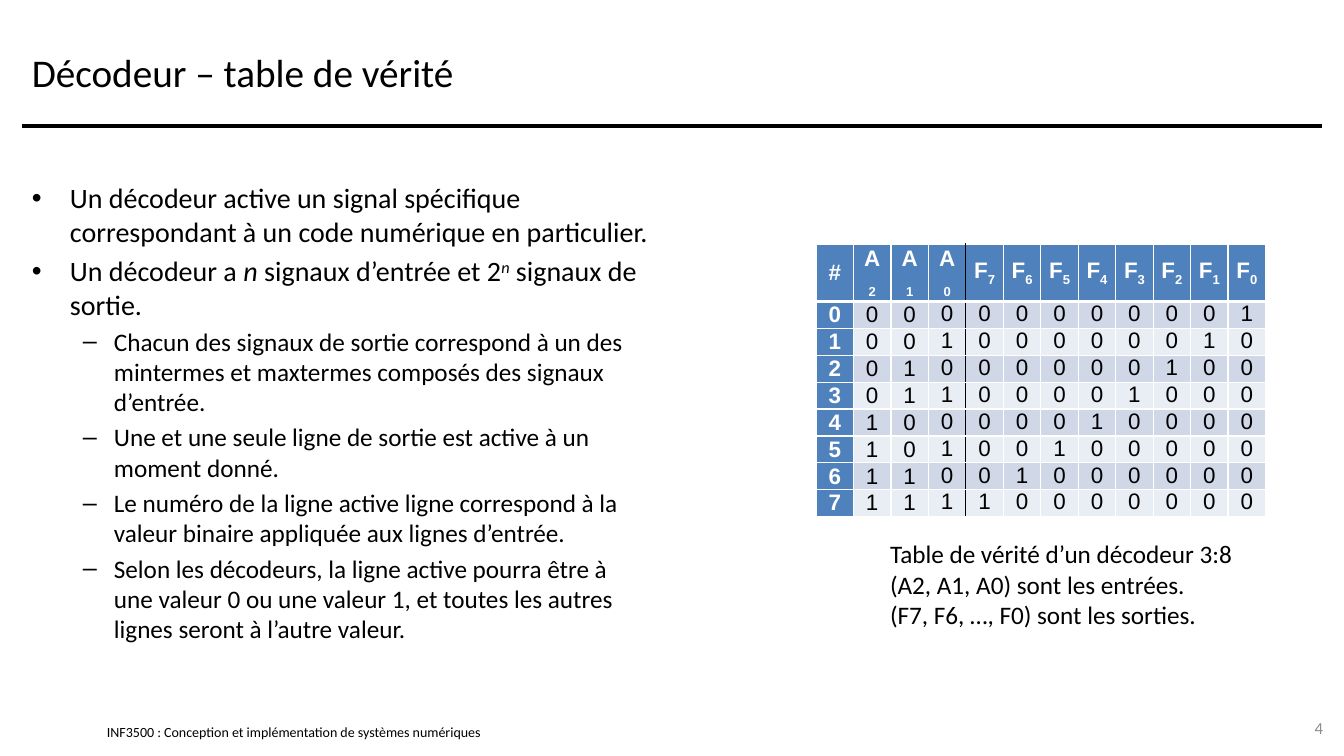
from lxml.etree import SubElement
from pptx import Presentation
from pptx.dml.color import RGBColor
from pptx.enum.shapes import MSO_CONNECTOR
from pptx.enum.text import MSO_ANCHOR, PP_ALIGN
from pptx.oxml.ns import qn
from pptx.util import Emu, Pt

TITLE = "Décodeur – table de vérité"
FOOTER = "INF3500 : Conception et implémentation de systèmes numériques"
PAGE = "4"
ITALIC = {"italic": True}
POINTS = [
    (0, ["Un décodeur active un signal spécifique correspondant à un code numérique en particulier."]),
    (0, ["Un décodeur a ", ("n", ITALIC), " signaux d’entrée et 2",
         ("n", {"italic": True, "base": 30}), " signaux de sortie."]),
    (1, ["Chacun des signaux de sortie correspond à un des mintermes et maxtermes composés des signaux d’entrée."]),
    (1, ["Une et une seule ligne de sortie est active à un moment donné."]),
    (1, ["Le numéro de la ligne active ligne correspond à la valeur binaire appliquée aux lignes d’entrée."]),
    (1, ["Selon les décodeurs, la ligne active pourra être à une valeur 0 ou une valeur 1, "
         "et toutes les autres lignes seront à l’autre valeur."]),
]
LEVELS = [
    {"bullet": "•", "left": 38, "hang": 38, "size": 20, "before": 4},
    {"bullet": "–", "left": 82, "hang": 31, "size": 18, "before": 3.6},
]
CAPTION = [
    "Table de vérité d’un décodeur 3:8",
    "(A2, A1, A0) sont les entrées.",
    "(F7, F6, …, F0) sont les sorties.",
]
INPUTS, OUTPUTS = 3, 8
BLACK, WHITE, GREY = "000000", "FFFFFF", "8C8C8C"
HEAD, BANDS = "4F81BD", ["D0D8E8", "E9EDF4"]
PX = 914400 / 100.8


def px(n):
    return Emu(round(n * PX))


def color(value):
    return RGBColor.from_string(value)


def write(p, runs, size=18, font="Calibri", fill=BLACK, bold=False, align=None,
          before=None, after=None, bullet=None, left=0, hang=0):
    if bullet:
        pPr = p._p.get_or_add_pPr()
        pPr.set("marL", str(px(left)))
        pPr.set("indent", str(-px(hang)))
        SubElement(pPr, qn("a:buFont"), typeface="Arial")
        SubElement(pPr, qn("a:buChar"), char=bullet)
    p.alignment = align
    if before is not None:
        p.space_before = Pt(before)
    if after is not None:
        p.space_after = Pt(after)
    for run in runs:
        text, fmt = (run, {}) if isinstance(run, str) else run
        r = p.add_run()
        r.text = text
        r.font.name, r.font.size = font, Pt(size)
        r.font.bold, r.font.italic = bold, fmt.get("italic", False)
        r.font.color.rgb = color(fill)
        if "base" in fmt:
            r.font._element.set("baseline", str(fmt["base"] * 1000))


def text_box(s, x, y, w, h, paragraphs, anchor=MSO_ANCHOR.MIDDLE, inset=True, **fmt):
    tf = s.shapes.add_textbox(px(x), px(y), px(w), px(h)).text_frame
    tf.word_wrap = True
    tf.vertical_anchor = anchor
    if not inset:
        tf.margin_left = tf.margin_right = tf.margin_top = tf.margin_bottom = 0
    for i, (runs, extra) in enumerate(paragraphs):
        p = tf.paragraphs[0] if i == 0 else tf.add_paragraph()
        options = {**fmt, **extra}
        if i == 0:
            options["before"] = 0
        write(p, runs, **options)


def border(cell, sides):
    tcPr = cell._tc.get_or_add_tcPr()
    for i, (side, (fill, width)) in enumerate(sides.items()):
        ln = SubElement(tcPr, qn("a:ln" + side), w=str(Pt(width)))
        SubElement(SubElement(ln, qn("a:solidFill")), qn("a:srgbClr"), val=fill)
        tcPr.insert(i, ln)


def truth_rows():
    names = [("A", i) for i in reversed(range(INPUTS))]
    names += [("F", i) for i in reversed(range(OUTPUTS))]
    yield [["#"]] + [[name, (str(i), {"base": -25})] for name, i in names]
    for n in range(2 ** INPUTS):
        bits = f"{n:0{INPUTS}b}" + f"{1 << n:0{OUTPUTS}b}"
        yield [[str(n)]] + [[bit] for bit in bits]


def truth_table(s, x, y, w, head_h, row_h):
    rows = list(truth_rows())
    cols = len(rows[0])
    height = head_h + row_h * (len(rows) - 1)
    table = s.shapes.add_table(len(rows), cols, px(x), px(y), px(w), px(height)).table
    for column in table.columns:
        column.width = px(w / cols)
    for i, row in enumerate(rows):
        table.rows[i].height = px(row_h if i else head_h)
        for j, runs in enumerate(row):
            cell = table.cell(i, j)
            heading = i == 0 or j == 0
            cell.margin_left = cell.margin_right = px(8)
            cell.margin_top = cell.margin_bottom = 0
            if i == 0 or j < INPUTS:
                cell.vertical_anchor = MSO_ANCHOR.MIDDLE
            cell.fill.solid()
            cell.fill.fore_color.rgb = color(HEAD if heading else BANDS[(i - 1) % 2])
            border(cell, {
                "L": (BLACK if j == INPUTS + 1 else WHITE, 1),
                "R": (BLACK if j == INPUTS else WHITE, 1),
                "T": (WHITE, 3 if i == 1 else 1),
                "B": (WHITE, 3 if i == 0 else 1),
            })
            write(cell.text_frame.paragraphs[0], runs, size=16, font="Arial", bold=heading,
                  fill=WHITE if heading else BLACK, align=PP_ALIGN.CENTER,
                  before=0, after=0 if i else 2)


def title_rule(s, x1, x2, y):
    line = s.shapes.add_connector(MSO_CONNECTOR.STRAIGHT, px(x1), px(y), px(x2), px(y))
    line.line.color.rgb = color(BLACK)
    line.line.width = Pt(3)
    SubElement(line._element.spPr, qn("a:effectLst"))


def main():
    prs = Presentation()
    prs.slide_width, prs.slide_height = px(1344), px(756)
    s = prs.slides.add_slide(prs.slide_layouts[6])
    text_box(s, 107, 723, 515, 17, [([FOOTER], {})], inset=False, size=10)
    title_rule(s, 22, 1322, 126)
    text_box(s, 22, 17, 1300, 109, [([TITLE], {})], size=28)
    text_box(s, 22, 176, 638, 512, [(runs, LEVELS[level]) for level, runs in POINTS],
             anchor=MSO_ANCHOR.TOP)
    text_box(s, 1266, 708, 67, 40, [([PAGE], {})], size=12, fill=GREY, align=PP_ALIGN.RIGHT)
    truth_table(s, 816, 244, 450, 43, 24)
    text_box(s, 890, 538, 353, 92, [([line], {}) for line in CAPTION], inset=False)
    prs.save("out.pptx")


if __name__ == "__main__":
    main()
